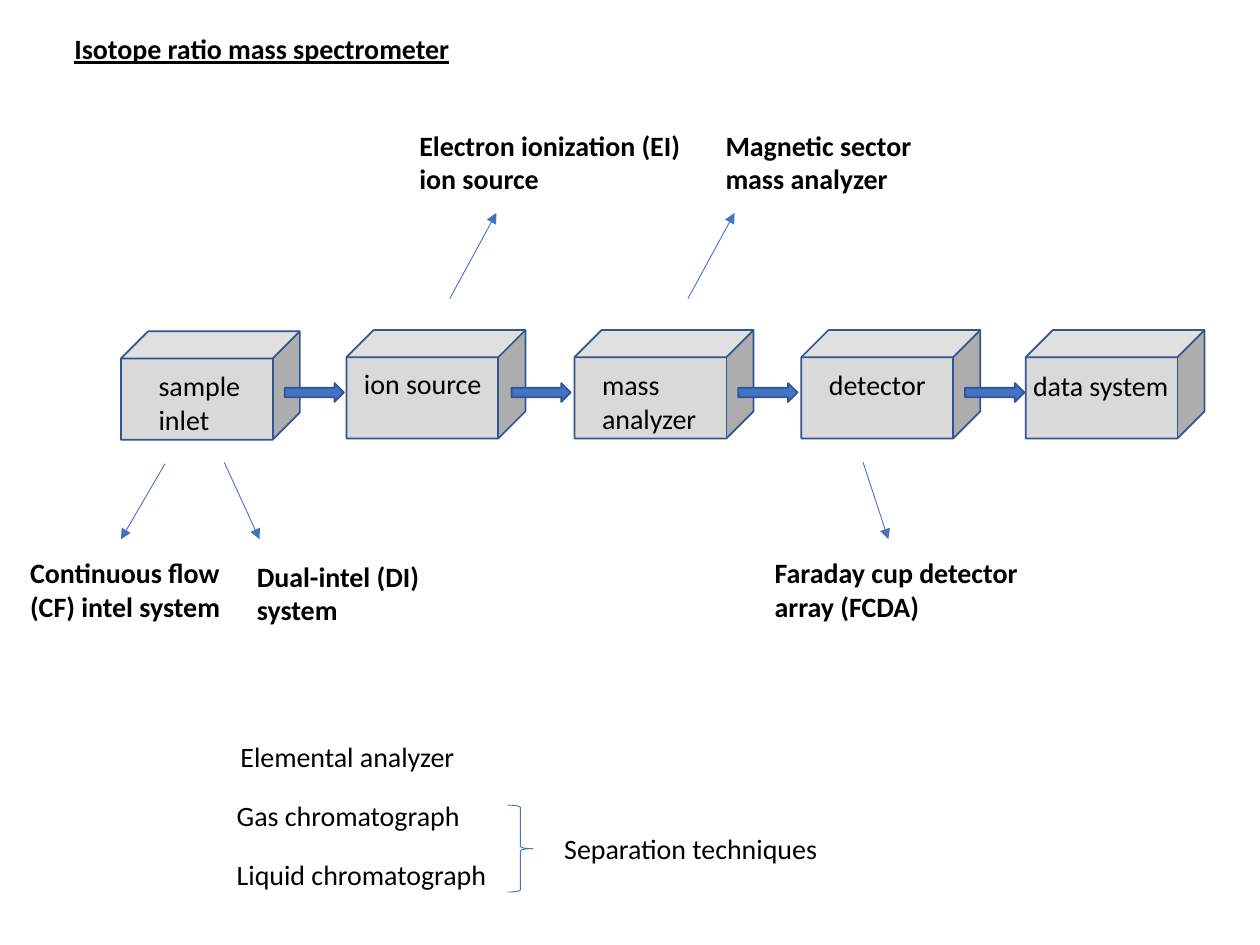
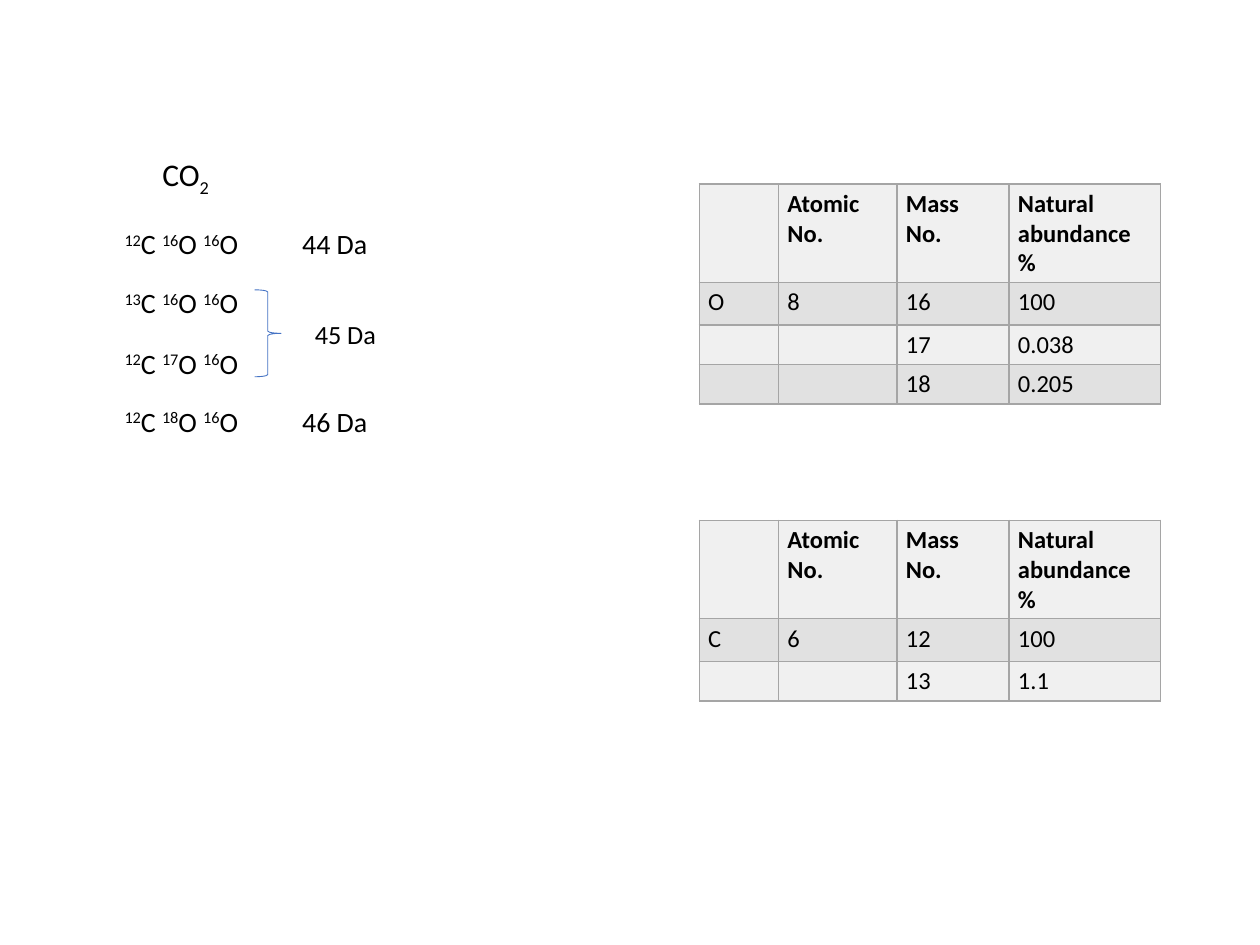
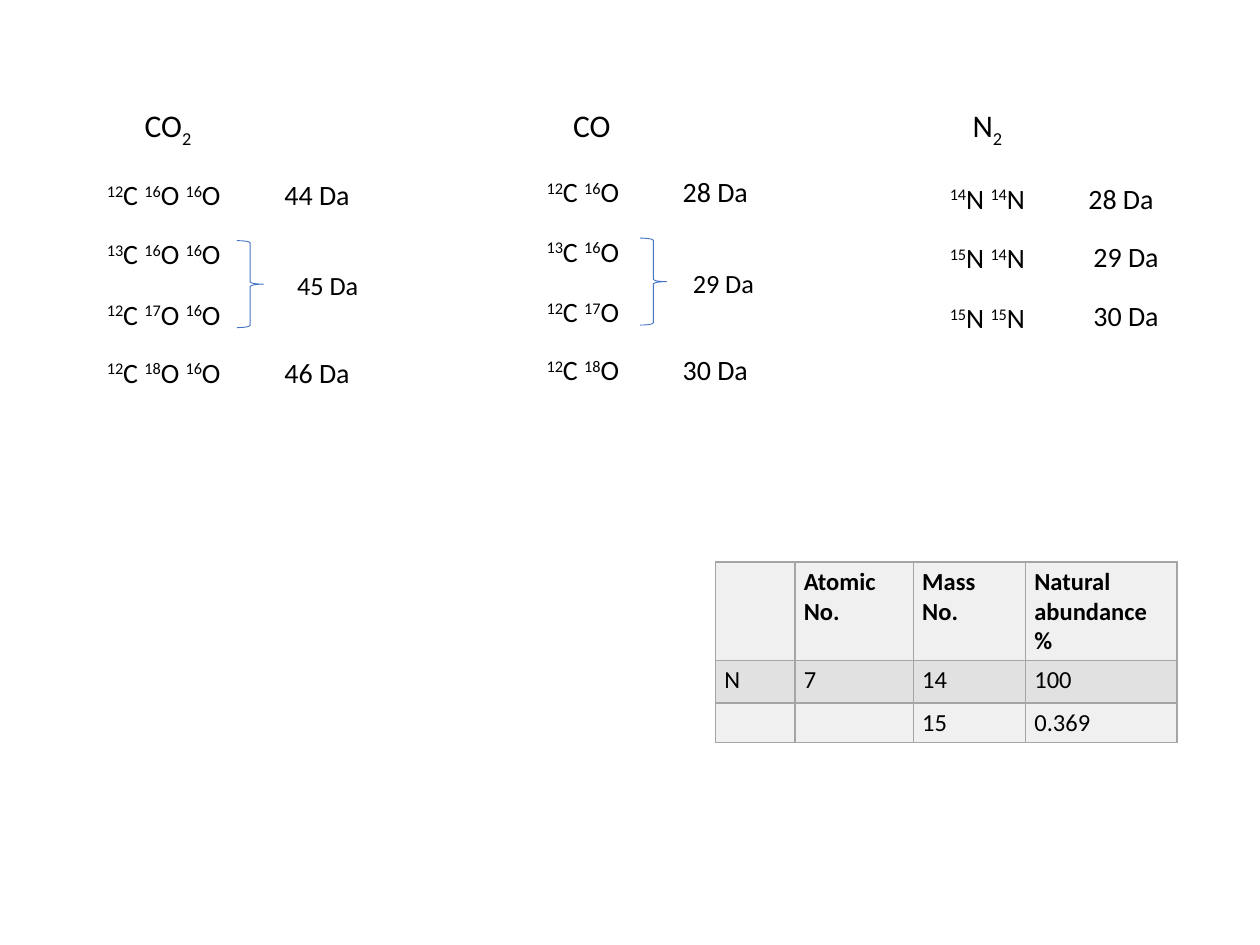
from itertools import groupby

from pptx import Presentation
from pptx.dml.color import RGBColor
from pptx.enum import shapes, text
from pptx.oxml import parse_xml
from pptx.oxml.ns import nsdecls, qn
from pptx.util import Inches, Pt

FONT, BLACK, BLUE, EDGE = "Calibri", "000000", "4472C4", "325491"
BLOCK, BORDER, LIGHT, DARK = "D9D9D9", "A5A5A5", "F0F0F0", "E1E1E1"
SHAPE = shapes.MSO_SHAPE

HEADING = ("Isotope ratio mass spectrometer", 0.49, 0.2, 3.22, 0.37)
BLOCKS = [(0.96, 2.63), (2.75, 2.62), (4.56, 2.62), (6.36, 2.62), (8.14, 2.62)]
BLOCK_LABELS = [
    ("sample\ninlet", 1.16, 2.88, 0.91, 0.64),
    ("ion source", 2.79, 2.86, 1.15, 0.37),
    ("mass\nanalyzer", 4.68, 2.87, 0.96, 0.64),
    ("detector", 6.48, 2.87, 0.98, 0.37),
    ("data system", 8.1, 2.88, 1.29, 0.37),
]
FLOW_LEFT, FLOW_PITCH = 2.26, 1.8
DETAILS = [
    ("Continuous flow\n(CF) intel system", 0.14, 4.36, 2.35, 0.64),
    ("Dual-intel (DI)\nsystem", 1.94, 4.39, 1.69, 0.64),
    ("Electron ionization (EI)\nion source", 3.23, 0.97, 2.35, 0.64),
    ("Magnetic sector\nmass analyzer", 5.66, 0.97, 1.98, 0.64),
    ("Faraday cup detector array (FCDA)", 6.05, 4.36, 2.53, 0.64),
]
POINTERS = [
    (1.31, 3.68, 0.96, 4.28),
    (1.78, 3.67, 2.06, 4.28),
    (3.57, 2.37, 3.94, 1.69),
    (5.46, 2.37, 5.83, 1.69),
    (6.85, 3.67, 7.05, 4.28),
]
TECHNIQUES = [
    ("Elemental analyzer", 1.81, 5.82, 2.45, 0.37),
    ("Gas chromatograph", 1.78, 6.29, 2.22, 0.38),
    ("Liquid chromatograph", 1.78, 6.76, 2.45, 0.37),
    ("Separation techniques", 4.38, 6.55, 2.76, 0.37),
]

ROW_OFFSETS = (0, 0.47, 0.95, 1.41)
CO2 = {
    "formula": ("CO2", 0.3, 0.59),
    "isotopes": ["12C 16O 16O\t44 Da", "13C 16O 16O", "12C 17O 16O", "12C 18O 16O\t46 Da"],
    "tab": 1.41,
    "brace": 1.13,
    "masses": [("45 Da", 1.51, 0.73, 15)],
}
CO = {
    "formula": ("CO", 0.21, 0.5),
    "isotopes": ["12C 16O\t28 Da", "13C 16O", "12C 17O", "12C 18O\t30 Da"],
    "tab": 1.08,
    "brace": 0.84,
    "masses": [("29 Da", 1.16, 0.73, 15)],
}
N2 = {
    "formula": ("N2", 0.18, 0.45),
    "isotopes": ["14N 14N\t28 Da", "15N 14N", "15N 15N"],
    "tab": 1.1,
    "brace": None,
    "masses": [("29 Da", 1.14, 0.46, 16), ("30 Da", 1.14, 0.93, 16)],
}

HEADER = ("", "Atomic No.", "Mass No.", "Natural abundance\n%")
OXYGEN = [("O", "8", "16", "100"), ("", "", "17", "0.038"), ("", "", "18", "0.205")]
CARBON = [("C", "6", "12", "100"), ("", "", "13", "1.1")]
NITROGEN = [("N", "7", "14", "100"), ("", "", "15", "0.369")]
COLUMNS = (0.63, 0.94, 0.89, 1.2)
ROWS = (0.78, 0.34, 0.31, 0.31)

ISOTOPE_SLIDES = [
    {
        "molecules": [(CO2, 0.89, 1.75, 1.18)],
        "tables": [(OXYGEN, 5.55, 1.46), (CARBON, 5.55, 4.13)],
    },
    {
        "molecules": [(CO2, 0.75, 1.36, 0.79), (CO, 4.24, 1.34, 0.79), (N2, 7.44, 1.39, 0.79)],
        "tables": [(NITROGEN, 5.68, 4.46)],
    },
]


def rgb(value):
    """Return a colour from its hex string."""
    return RGBColor.from_string(value)


def style(p, size=16, bold=False, underline=None):
    """Set the shared font on a paragraph."""
    p.font.name, p.font.size = FONT, Pt(size)
    p.font.bold, p.font.underline = bold, underline
    p.font.color.rgb = rgb(BLACK)


def add_text(slide, words, x, y, w, h, size=16, bold=False):
    """Add a text box with one paragraph per line."""
    sp = slide.shapes.add_textbox(*map(Inches, (x, y, w, h)))
    tf = sp.text_frame
    tf.word_wrap = True
    tf.text = words
    for p in tf.paragraphs:
        style(p, size, bold)
    return tf.paragraphs[0]


def add_script(p, words, baseline):
    """Add runs whose digits are raised or lowered."""
    for is_digit, chars in groupby(words, str.isdigit):
        r = p.add_run()
        r.text = "".join(chars)
        if is_digit:
            r._r.get_or_add_rPr().set("baseline", str(baseline * 1000))


def add_tab(p, position):
    """Put one left tab stop on a paragraph."""
    tabs = parse_xml(
        f'<a:tabLst {nsdecls("a")}><a:tab pos="{Inches(position)}" algn="l"/></a:tabLst>')
    pPr = p._p.get_or_add_pPr()
    pPr.insert(0, tabs)


def add_preset(slide, kind, x, y, w, h, fill=None, line=EDGE, width=1):
    """Add a flat preset shape."""
    sp = slide.shapes.add_shape(kind, *map(Inches, (x, y, w, h)))
    sp.shadow.inherit = False
    if fill:
        sp.fill.solid()
        sp.fill.fore_color.rgb = rgb(fill)
    else:
        sp.fill.background()
    sp.line.color.rgb, sp.line.width = rgb(line), Pt(width)
    return sp


def add_pointer(slide, *ends):
    """Add a thin line that ends in an arrowhead."""
    cx = slide.shapes.add_connector(shapes.MSO_CONNECTOR.STRAIGHT, *map(Inches, ends))
    cx.line.color.rgb, cx.line.width = rgb(BLUE), Pt(0.5)
    cx.line._get_or_add_ln().append(parse_xml(f'<a:tailEnd {nsdecls("a")} type="triangle"/>'))
    cx._element.find(qn("p:spPr")).append(parse_xml(f'<a:effectLst {nsdecls("a")}/>'))


def add_molecule(slide, molecule, x, y, formula_y):
    """Add a formula, its isotope combinations and their masses."""
    words, dx, w = molecule["formula"]
    add_script(add_text(slide, "", x + dx, formula_y, w, 0.4, 18), words, -25)
    for words, dy in zip(molecule["isotopes"], ROW_OFFSETS):
        isotopes, tab, mass = words.partition("\t")
        p = add_text(slide, "", x, y + dy, 2.27 if mass else 1.53, 0.37)
        add_script(p, isotopes, 30)
        if mass:
            add_tab(p, molecule["tab"])
            p.add_run().text = tab + mass
    if molecule["brace"]:
        sp = add_preset(slide, SHAPE.LEFT_BRACE, x + molecule["brace"], y + 0.55, 0.21, 0.69,
                        line=BLUE, width=0.5)
        sp.rotation = 180
    for words, dx, dy, size in molecule["masses"]:
        add_text(slide, words, x + dx, y + dy, 0.9, 0.37, size)


def format_cell(cell, words, fill, bold):
    """Fill, border and write one table cell."""
    cell.margin_left = cell.margin_right = Inches(0.07)
    cell.margin_top = cell.margin_bottom = Inches(0.04)
    tcPr = cell._tc.get_or_add_tcPr()
    for side in "LRTB":
        tcPr.append(parse_xml(
            f'<a:ln{side} {nsdecls("a")} w="{Pt(1)}"><a:solidFill>'
            f'<a:srgbClr val="{BORDER}"/></a:solidFill></a:ln{side}>'))
    cell.fill.solid()
    cell.fill.fore_color.rgb = rgb(fill)
    cell.text = words
    for p in cell.text_frame.paragraphs:
        style(p, 14, bold)
        if not words:
            p._p.get_or_add_endParaRPr().set("sz", "1400")


def add_abundances(slide, isotopes, x, y):
    """Add a table of natural abundances."""
    rows = [HEADER] + isotopes
    heights = ROWS[:len(rows)]
    size = (x, y, sum(COLUMNS), sum(heights))
    table = slide.shapes.add_table(len(rows), len(COLUMNS), *map(Inches, size)).table
    for column, w in zip(table.columns, COLUMNS):
        column.width = Inches(w)
    for i, (row, h) in enumerate(zip(rows, heights)):
        table.rows[i].height = Inches(h)
        for j, words in enumerate(row):
            format_cell(table.cell(i, j), words, DARK if i % 2 else LIGHT, i == 0)


def add_heading(slide, words, *box):
    """Place and format the slide title."""
    sp = slide.shapes.title
    sp.left, sp.top, sp.width, sp.height = map(Inches, box)
    tf = sp.text_frame
    tf.text = words
    tf.word_wrap, tf.auto_size = True, text.MSO_AUTO_SIZE.NONE
    tf.vertical_anchor = text.MSO_ANCHOR.TOP
    p = tf.paragraphs[0]
    p.alignment = text.PP_ALIGN.LEFT
    style(p, bold=True, underline=True)


def build_spectrometer(slide):
    """Draw the instrument from sample inlet to data system."""
    add_heading(slide, *HEADING)
    for x, y in BLOCKS:
        add_preset(slide, SHAPE.CUBE, x, y, 1.42, 0.86, BLOCK)
    for i in range(len(BLOCKS) - 1):
        add_preset(slide, SHAPE.RIGHT_ARROW, FLOW_LEFT + i * FLOW_PITCH, 3.04, 0.47, 0.15, BLUE)
    for label in BLOCK_LABELS + TECHNIQUES:
        add_text(slide, *label)
    for detail in DETAILS:
        add_text(slide, *detail, bold=True)
    for ends in POINTERS:
        add_pointer(slide, *ends)
    add_preset(slide, SHAPE.RIGHT_BRACE, 4.03, 6.39, 0.2, 0.69, line=BLUE, width=0.5)


def main():
    """Build and save the three slides."""
    prs = Presentation()
    prs.slide_width, prs.slide_height = Inches(10), Inches(7.5)
    title_only, blank = prs.slide_layouts[5], prs.slide_layouts[6]
    build_spectrometer(prs.slides.add_slide(title_only))
    for content in ISOTOPE_SLIDES:
        slide = prs.slides.add_slide(blank)
        for molecule in content["molecules"]:
            add_molecule(slide, *molecule)
        for table in content["tables"]:
            add_abundances(slide, *table)
    prs.save("out.pptx")


if __name__ == "__main__":
    main()
